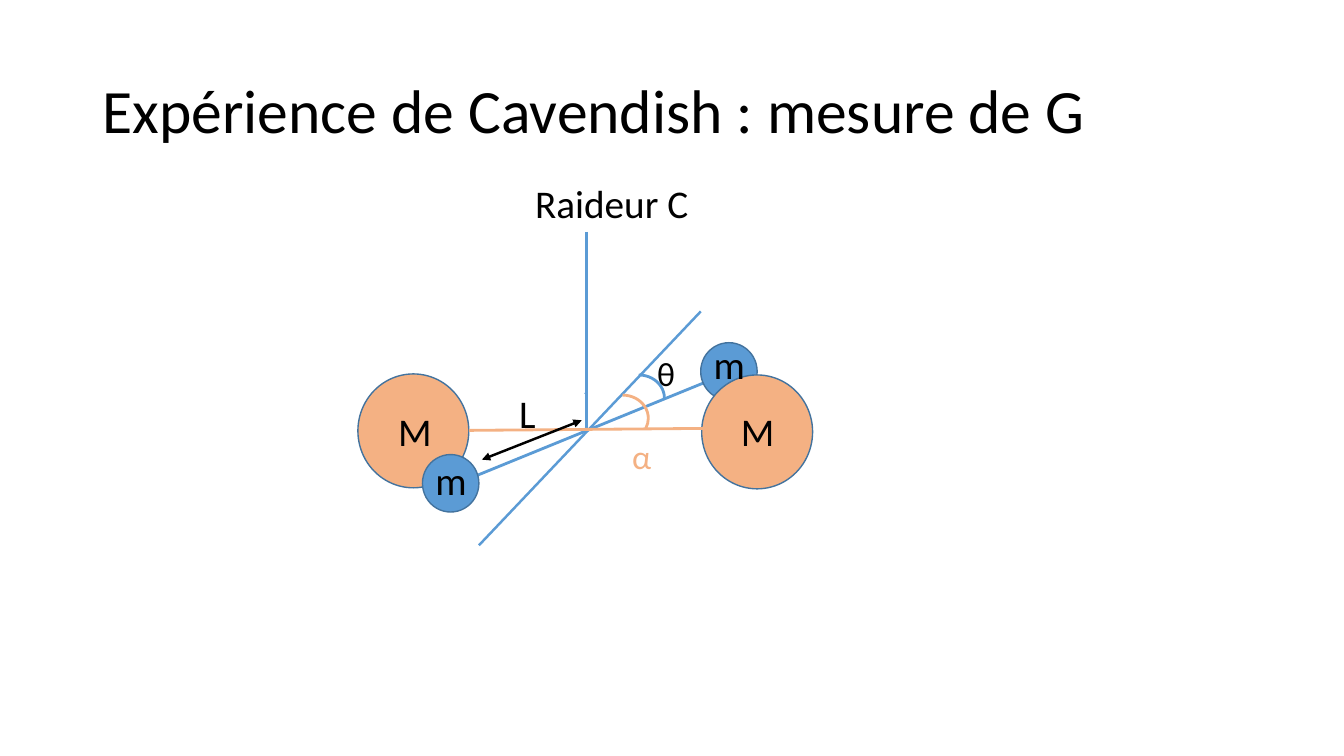
from pptx import Presentation
from pptx import util as u
from pptx.dml.color import RGBColor
from pptx.enum import shapes, text
from pptx.oxml.ns import qn
from lxml import etree

PX = 9144  # EMU per px, 100 px to the inch
COLORS = {"blue": "5B9BD5", "outline": "43739E", "orange": "F4B183", "black": "000000"}
FONT = "Calibri"

# Content, in px
TITLE = ("Expérience de Cavendish : mesure de G", (92, 40, 1150, 145))
SMALL, LARGE = (56, 57), (110, 113)
BACK_LINES = [  # from, to, color, points
    ((582, 230), (582, 427), "blue", 2),       # torsion wire
    ((460, 477), (705, 377), "blue", 2),       # deflected beam
    ((475, 541), (695, 309), "blue", 1.75),    # beam at rest
]
FRONT_LINES = [
    ((465, 427), (698, 425), "orange", 2),     # axis of the large masses
]
ARM_ARROW = ((478, 456), (577, 417), "black", 1.75)
BACK_BALLS = [((695, 340), SMALL, "blue")]
FRONT_BALLS = [
    ((696, 372), LARGE, "orange"),
    ((355, 371), LARGE, "orange"),
    ((419, 451), SMALL, "blue"),
]
BACK_ARCS = [  # box, color, points, end angle adjustment
    ((577, 390, 5, 5), "blue", 0.5, 0),
    ((608, 372, 51, 46), "blue", 2, 0),
]
ALPHA_ARC = ((592, 392, 51, 46), "orange", 2, 13.55)
LABELS = [  # text, box, points, color
    ("m", (422, 448, 52, 57), 28, "black"),
    ("m", (698, 333, 52, 57), 28, "black"),
    ("M", (725, 399, 54, 57), 28, "black"),
    ("M", (385, 399, 54, 57), 28, "black"),
    ("Raideur C", (521, 173, 174, 57), 28, "black"),
    ("θ", (642, 345, 38, 50), 24, "black"),
    ("L", (505, 381, 37, 57), 28, "black"),
    ("α", (617, 428, 39, 50), 24, "orange"),
]

presentation = Presentation()
presentation.slide_width, presentation.slide_height = u.Inches(13.33), u.Inches(7.5)
slide = presentation.slides.add_slide(presentation.slide_layouts[6])


def emu(lengths):
    return [u.Emu(length * PX) for length in lengths]


def rgb(color):
    return RGBColor.from_string(COLORS[color])


def set_line(shape, color, points):
    shape.line.color.rgb = rgb(color)
    shape.line.width = u.Pt(points)


def add_text(words, box, size=28, color="black", wrap=False,
             anchor=text.MSO_ANCHOR.TOP, spacing=1.0):
    frame = slide.shapes.add_textbox(*emu(box)).text_frame
    frame.word_wrap = wrap
    frame.vertical_anchor = anchor
    paragraph = frame.paragraphs[0]
    paragraph.text = words
    paragraph.line_spacing = spacing
    font = paragraph.runs[0].font
    font.name, font.size, font.color.rgb = FONT, u.Pt(size), rgb(color)


def add_line(start, end, color, points, arrows=False):
    line = slide.shapes.add_connector(shapes.MSO_CONNECTOR.STRAIGHT, *emu(start + end))
    set_line(line, color, points)
    if arrows:
        for tag in ("a:headEnd", "a:tailEnd"):
            etree.SubElement(line.line._get_or_add_ln(), qn(tag), type="triangle")
    etree.SubElement(line._element.spPr, qn("a:effectLst"))


def add_ball(corner, size, color):
    ball = slide.shapes.add_shape(shapes.MSO_SHAPE.OVAL, *emu(corner + size))
    ball.shadow.inherit = False
    ball.fill.solid()
    ball.fill.fore_color.rgb = rgb(color)
    set_line(ball, "outline", 1)


def add_arc(box, color, points, end):
    arc = slide.shapes.add_shape(shapes.MSO_SHAPE.ARC, *emu(box))
    arc.shadow.inherit = False
    arc.fill.background()
    set_line(arc, color, points)
    arc.adjustments[0], arc.adjustments[1] = 162, end


# Title
add_text(*TITLE, size=44, wrap=True, anchor=text.MSO_ANCHOR.MIDDLE, spacing=0.9)

# Torsion balance, from back to front
for line in BACK_LINES:
    add_line(*line)
for ball in BACK_BALLS:
    add_ball(*ball)
for arc in BACK_ARCS:
    add_arc(*arc)
for ball in FRONT_BALLS:
    add_ball(*ball)
for line in FRONT_LINES:
    add_line(*line)
add_line(*ARM_ARROW, arrows=True)
add_arc(*ALPHA_ARC)

# Labels
for label in LABELS:
    add_text(*label)

presentation.save("out.pptx")
